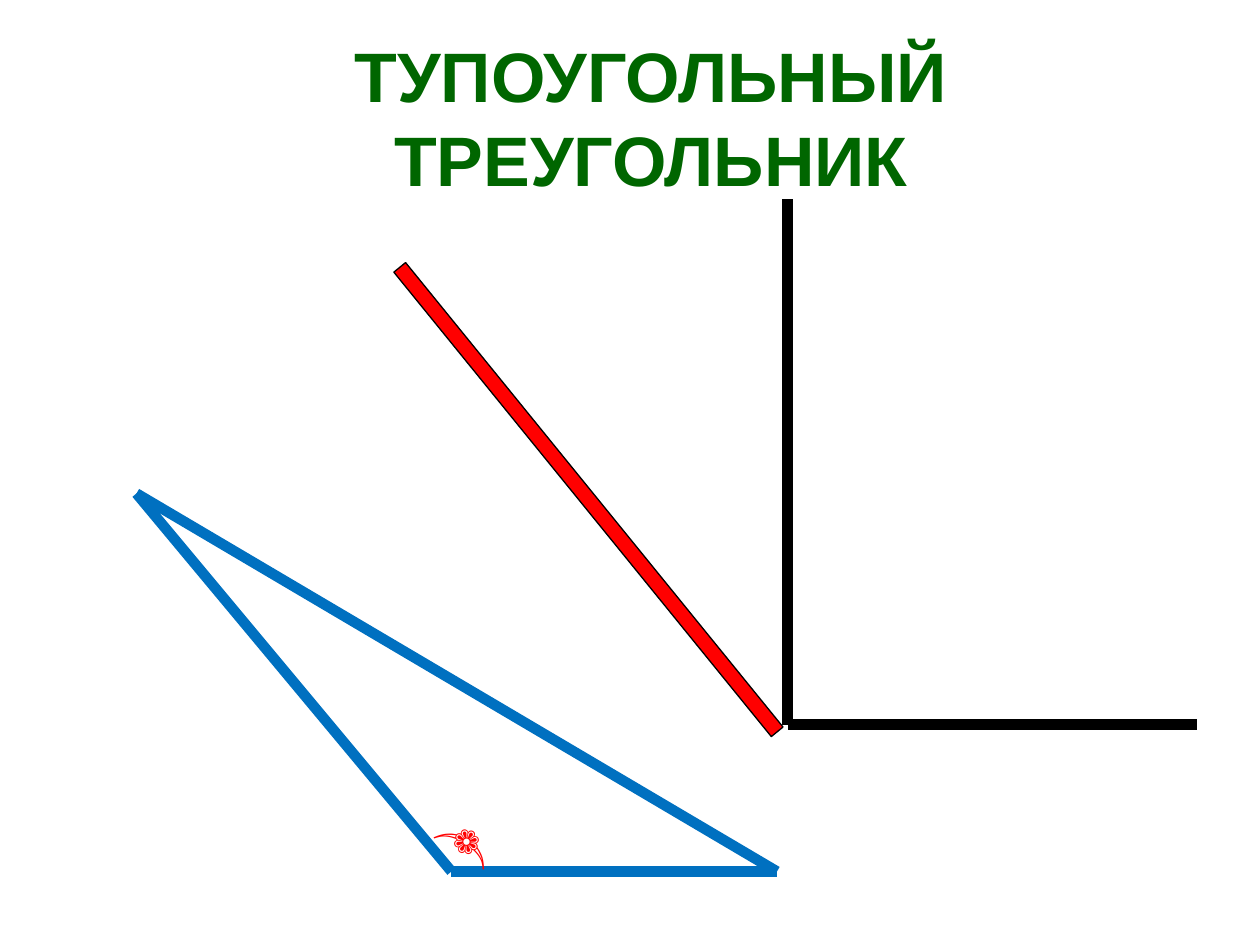
from lxml import etree
from pptx import Presentation
from pptx.dml.color import RGBColor
from pptx.enum.shapes import MSO_CONNECTOR, MSO_SHAPE
from pptx.enum.text import MSO_ANCHOR, MSO_AUTO_SIZE, PP_ALIGN
from pptx.oxml.ns import qn
from pptx.util import Pt

COLORS = {
    "title": "006600",
    "triangle": "0070C0",
    "ray": "FF0000",
    "right_angle": "000000",
}


def add_text(text, left, top, width, height, *, color, align=PP_ALIGN.LEFT,
             anchor=MSO_ANCHOR.TOP, rotation=0, auto_size=MSO_AUTO_SIZE.NONE):
    box = slide.shapes.add_textbox(Pt(left), Pt(top), Pt(width), Pt(height))
    box.rotation = rotation
    frame = box.text_frame
    frame.word_wrap = True
    frame.auto_size = auto_size
    frame.vertical_anchor = anchor
    paragraph = frame.paragraphs[0]
    paragraph.alignment = align
    run = paragraph.add_run()
    run.text = text
    run.font.name = "Arial"
    run.font.size = Pt(40)
    run.font.bold = True
    run.font.color.rgb = RGBColor.from_string(COLORS[color])


def add_figure(segments, color):
    """Group thick straight lines, each given as a pair of points."""
    figure = slide.shapes.add_group_shape()
    for start, end in segments:
        side = figure.shapes.add_connector(
            MSO_CONNECTOR.STRAIGHT, *map(Pt, start + end))
        side.line.color.rgb = RGBColor.from_string(COLORS[color])
        side.line.width = Pt(6)
        etree.SubElement(side._element.spPr, qn("a:effectLst"))


deck = Presentation()
deck.slide_width, deck.slide_height = Pt(720), Pt(540)
slide = deck.slides.add_slide(deck.slide_layouts[6])

add_text("ТУПОУГОЛЬНЫЙ ТРЕУГОЛЬНИК", 60, 21.6, 624, 90, color="title",
         align=PP_ALIGN.CENTER, anchor=MSO_ANCHOR.MIDDLE)

# Obtuse triangle
apex, obtuse_corner, right_corner = (78, 282), (258, 498), (444, 498)
add_figure([(apex, obtuse_corner), (obtuse_corner, right_corner),
            (apex, right_corner)], "triangle")

# Right angle for comparison
vertex = (450, 414)
add_figure([((450, 114), vertex), (vertex, (684, 414))], "right_angle")

# Arc that marks the obtuse angle
add_text("﴿", 234.72, 431.28, 77.76, 55.44, color="ray", rotation=302.4,
         auto_size=MSO_AUTO_SIZE.SHAPE_TO_FIT_TEXT)

# Slanted ray: an arrow without a head
ray = slide.shapes.add_shape(
    MSO_SHAPE.UP_ARROW, Pt(331.92), Pt(114.48), Pt(8.64), Pt(342))
ray.adjustments[0] = 1
ray.adjustments[1] = 0
ray.rotation = 140.9
ray.shadow.inherit = False
ray.fill.solid()
ray.fill.fore_color.rgb = RGBColor.from_string(COLORS["ray"])
ray.line.color.rgb = RGBColor.from_string(COLORS["right_angle"])
ray.line.width = Pt(0.75)

deck.save("out.pptx")
